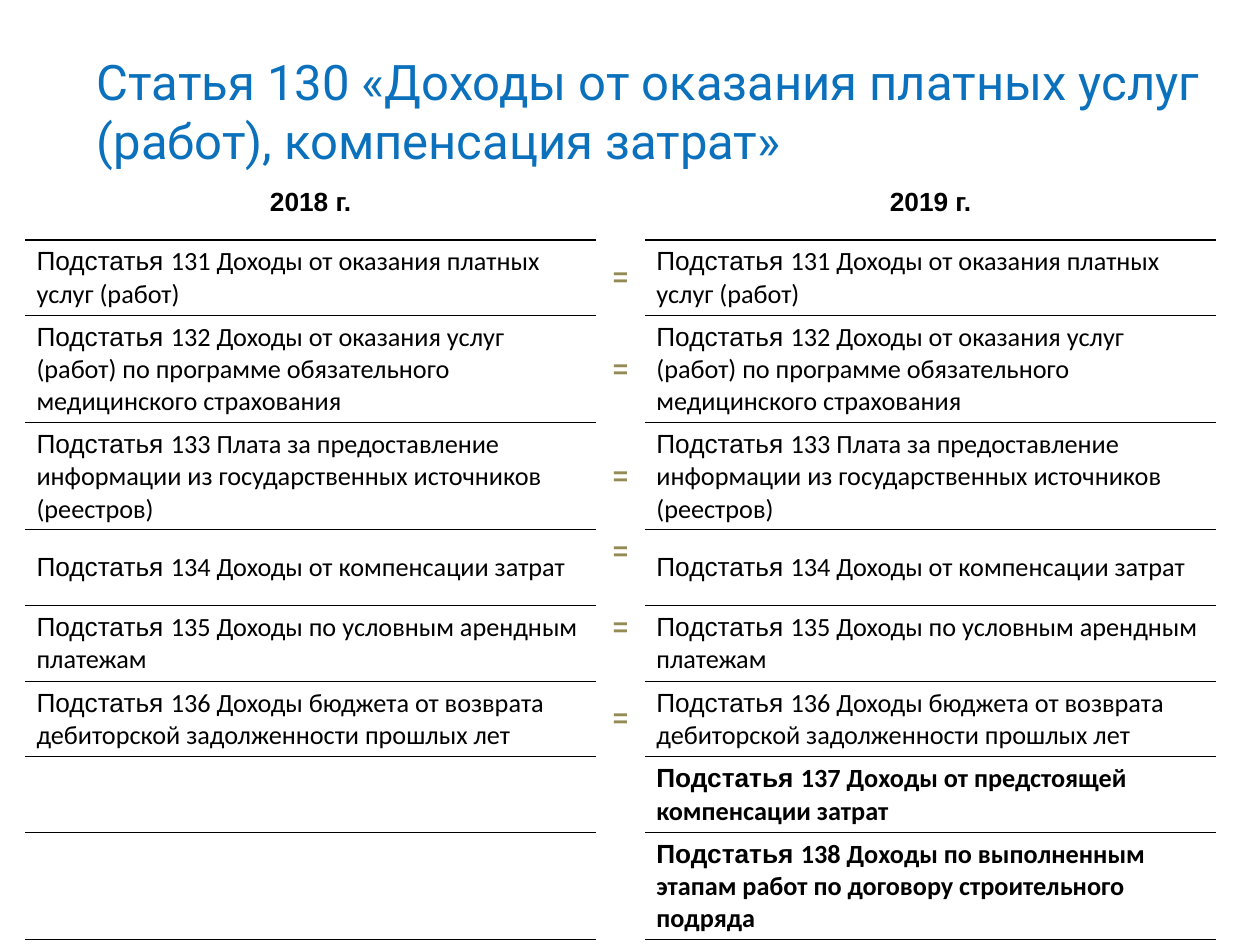
"""Builds a slide comparing the sub-items of item 130 in 2018 and 2019."""
from lxml import etree
from pptx import Presentation
from pptx import util as u
from pptx.dml import color
from pptx.enum import text
from pptx.oxml import ns

COLORS = {"title": "0B71BD", "ink": "000000", "equal": "948A54", "paper": "FFFFFF"}
PLAIN_TABLE = "{2D5ABB26-0587-4C30-8999-92F81FD0307C}"
ROWS = [
    (0.59, "131 Доходы от оказания платных услуг (работ)"),
    (0.84, "132 Доходы от оказания услуг (работ) по программе обязательного медицинского страхования"),
    (0.84, "133 Плата за предоставление информации из государственных источников (реестров)"),
    (0.59, "134 Доходы от компенсации затрат"),
    (0.59, "135 Доходы по условным арендным платежам"),
    (0.59, "136 Доходы бюджета от возврата дебиторской задолженности прошлых лет"),
    (0.59, "137 Доходы от предстоящей компенсации затрат"),
    (0.84, "138 Доходы по выполненным этапам работ по договору строительного подряда"),
]
FIRST_NEW = 7
RAISED = (4, 5)


class Deck:
    """Holds the style and the current slide."""

    def __init__(self, prs):
        self.prs = prs
        self.s = prs.slides.add_slide(prs.slide_layouts[6])
        self.size = 15

    def x(self, share):
        return int(self.prs.slide_width * share)

    def y(self, share):
        return int(self.prs.slide_height * share)

    def run(self, p, words, font="Arial", ink="ink", bold=False, size=None):
        r = p.add_run()
        r.text = words
        r.font.name, r.font.bold = font, bold
        r.font.size = u.Pt(size or self.size)
        r.font.color.rgb = color.RGBColor.from_string(COLORS[ink])

    def title(self, words, left, top, width, height):
        sp = self.s.shapes.add_textbox(self.x(left), self.y(top), self.x(width), self.y(height))
        tf = sp.text_frame
        tf.word_wrap = True
        self.run(tf.paragraphs[0], words, "Roboto", "title", size=28)

    def table(self, left, top, widths, heights):
        frame = self.s.shapes.add_table(
            len(heights), len(widths), self.x(left), self.y(top),
            self.x(sum(widths)), self.y(sum(heights)))
        tbl = frame.table
        tbl.first_row = tbl.horz_banding = False
        frame._element.find(".//" + ns.qn("a:tableStyleId")).text = PLAIN_TABLE
        for col, width in zip(tbl.columns, widths):
            col.width = self.x(width)
        for row, height in zip(tbl.rows, heights):
            row.height = self.y(height)
        return tbl

    def cell(self, cell, runs=(), center=False, bottom=0.05):
        cell.fill.background()
        cell.vertical_anchor = text.MSO_ANCHOR.MIDDLE
        cell.margin_left = cell.margin_right = u.Inches(0.09)
        cell.margin_top, cell.margin_bottom = u.Inches(0.05), u.Inches(bottom)
        p = cell.text_frame.paragraphs[0]
        p.alignment = text.PP_ALIGN.CENTER if center else text.PP_ALIGN.LEFT
        for words, style in runs:
            self.run(p, words, **style)

    def borders(self, cell, **sides):
        tcPr = cell._tc.get_or_add_tcPr()
        for i, (side, (width, ink)) in enumerate(sides.items()):
            ln = etree.Element(ns.qn("a:ln" + side), w=str(u.Pt(width)))
            fill = etree.SubElement(ln, ns.qn("a:solidFill"))
            etree.SubElement(fill, ns.qn("a:srgbClr"), val=COLORS[ink])
            tcPr.insert(i, ln)


def main():
    prs = Presentation()
    prs.slide_width, prs.slide_height = u.Inches(10), u.Inches(7.5)
    deck = Deck(prs)
    deck.title("Статья 130 «Доходы от оказания платных услуг (работ), компенсация затрат»",
               0.067, 0.048, 0.945, 0.139)
    heights = [0.59] + [height for height, _ in ROWS]
    tbl = deck.table(0.02, 0.175, [0.453, 0.039, 0.453], [h / 7.5 for h in heights])

    thin, thick, blank = (0.5, "ink"), (1.5, "ink"), (0.5, "paper")
    for col, year in ((0, "2018 г."), (2, "2019 г.")):
        deck.cell(tbl.cell(0, col), [(year, {"bold": True})], center=True)
        deck.borders(tbl.cell(0, col), B=thick)
    deck.cell(tbl.cell(0, 1))
    deck.borders(tbl.cell(0, 1), B=blank)

    for row, (_, name) in enumerate(ROWS, 1):
        new = row >= FIRST_NEW
        item = [("Подстатья ", {"bold": new}), (name, {"font": "Calibri", "bold": new})]
        equal = [("=", {"ink": "equal", "bold": True})]
        deck.cell(tbl.cell(row, 0), [] if new else item)
        deck.cell(tbl.cell(row, 1), [] if new else equal, center=True,
                  bottom=0.3 if row in RAISED else 0.05)
        deck.cell(tbl.cell(row, 2), item)
        for col in (0, 2):
            deck.borders(tbl.cell(row, col), T=thick if row == 1 else thin, B=thin)
        deck.borders(tbl.cell(row, 1), T=blank, B=blank)
    prs.save("out.pptx")


if __name__ == "__main__":
    main()
